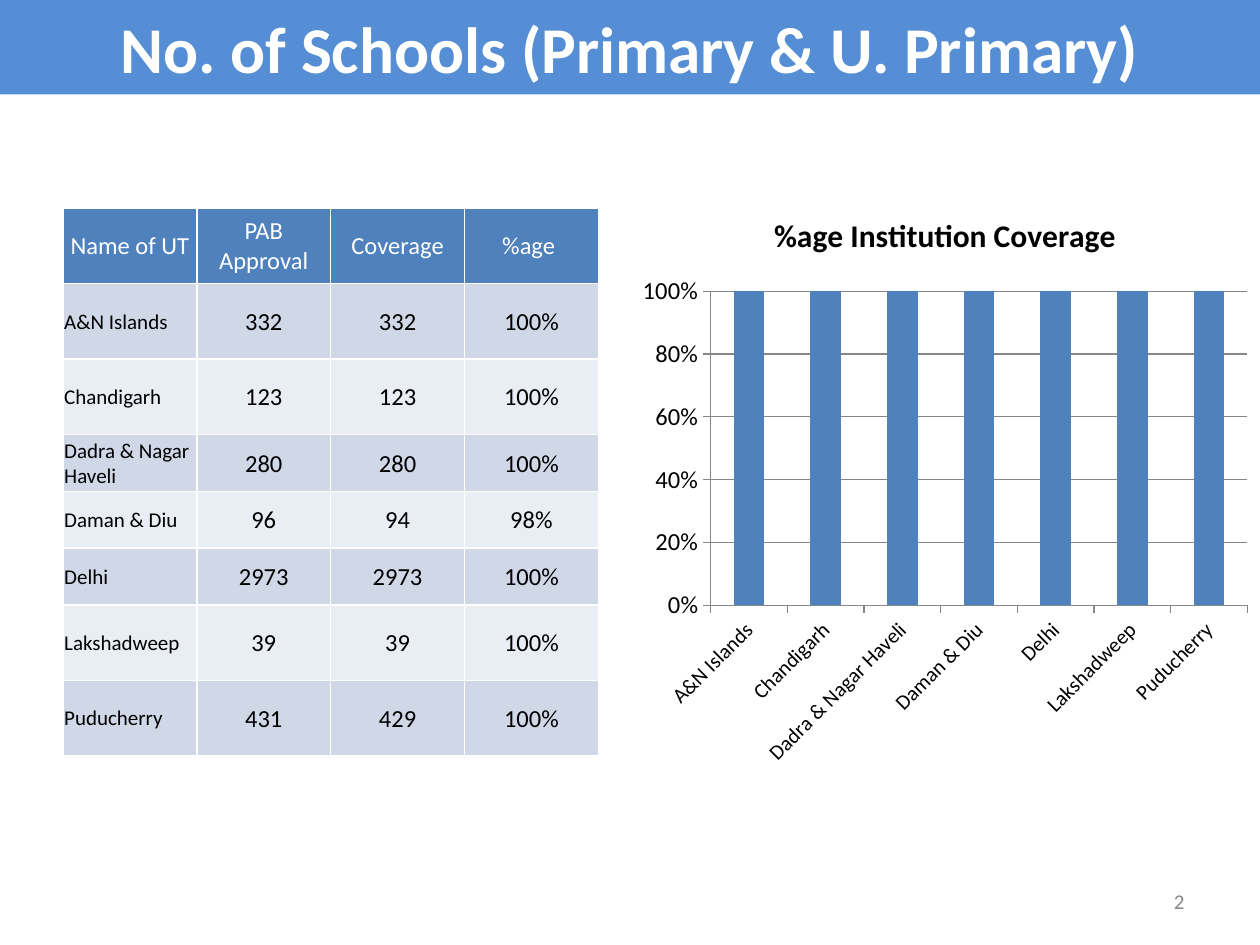
"""Build a slide on school coverage with a table and a column chart."""
import pptx
import pptx.chart.data
import pptx.dml.color
import pptx.enum.chart
import pptx.enum.shapes
import pptx.enum.text
import pptx.util

TITLE = "No. of Schools (Primary & U. Primary)"
CHART_TITLE = "%age Institution Coverage"
PAGE_NUMBER = "2"
HEADER = ("Name of UT", "PAB Approval", "Coverage", "%age ")
TERRITORIES = [
    ("A&N Islands", "332", "332", "100%"),
    ("Chandigarh", "123", "123", "100%"),
    ("Dadra & Nagar Haveli", "280", "280", "100%"),
    ("Daman & Diu", "96", "94", "98%"),
    ("Delhi", "2973", "2973", "100%"),
    ("Lakshadweep", "39", "39", "100%"),
    ("Puducherry", "431", "429", "100%"),
]
COVERAGE = (10, 10, 10, 9.79, 10, 10, 9.95)
TALL, SHORT = 0.6, 0.45
ROW_HEIGHTS = (TALL, TALL, TALL, SHORT, SHORT, SHORT, TALL, TALL)
COLORS = {
    "banner": "558ED5", "accent": "4F81BD", "odd": "D0D8E8", "even": "E9EDF4",
    "white": "FFFFFF", "black": "000000", "grey": "898989", "line": "868686",
}
FONT = "Calibri"
WIDTH, HEIGHT = 10, 7.5
ALIGN = pptx.enum.text.PP_ALIGN
MIDDLE = pptx.enum.text.MSO_ANCHOR.MIDDLE


def color(name):
    return pptx.dml.color.RGBColor.from_string(COLORS[name])


def area(left, top, width, height):
    """Convert shares of the slide's size to lengths."""
    return [pptx.util.Inches(share * size) for share, size in
            zip((left, top, width, height), (WIDTH, HEIGHT) * 2)]


def apply(target, values):
    for name, value in values.items():
        setattr(target, name, value)


def style_font(font, size, color_name, bold=False):
    apply(font, {"name": FONT, "size": pptx.util.Pt(size), "bold": bold})
    font.color.rgb = color(color_name)


def write(frame, text, size, color_name, alignment, bold=False):
    paragraph = frame.paragraphs[0]
    paragraph.alignment = alignment
    run = paragraph.add_run()
    run.text = text
    style_font(run.font, size, color_name, bold)


def add_title(slide):
    banner = slide.shapes.add_shape(
        pptx.enum.shapes.MSO_SHAPE.RECTANGLE, *area(0, 0, 1, 0.1))
    banner.shadow.inherit = False
    banner.fill.solid()
    banner.fill.fore_color.rgb = color("banner")
    banner.line.fill.background()
    apply(banner.text_frame, {"word_wrap": True, "vertical_anchor": MIDDLE})
    write(banner.text_frame, TITLE, 37.3, "white", ALIGN.CENTER, True)


def add_territory_table(slide):
    rows = [HEADER, *TERRITORIES]
    table = slide.shapes.add_table(
        len(rows), len(HEADER), *area(0.05, 0.22, 0.425, 0.58)).table
    margin = pptx.util.Inches(0.01)
    cell_format = {"vertical_anchor": MIDDLE, "margin_left": margin,
                   "margin_top": margin, "margin_right": margin, "margin_bottom": 0}
    for row_index, (texts, height) in enumerate(zip(rows, ROW_HEIGHTS)):
        table.rows[row_index].height = pptx.util.Inches(height)
        is_header = row_index == 0
        fill = "accent" if is_header else ("even", "odd")[row_index % 2]
        for column_index, text in enumerate(texts):
            cell = table.cell(row_index, column_index)
            apply(cell, cell_format)
            cell.fill.solid()
            cell.fill.fore_color.rgb = color(fill)
            is_name = column_index == 0 and not is_header
            write(cell.text_frame, text, 12 if is_name else 14,
                  "white" if is_header else "black",
                  ALIGN.LEFT if is_name else ALIGN.CENTER)


def add_coverage_chart(slide):
    data = pptx.chart.data.CategoryChartData()
    data.categories = [territory[0] for territory in TERRITORIES]
    data.add_series(CHART_TITLE, COVERAGE)
    chart = slide.shapes.add_chart(
        pptx.enum.chart.XL_CHART_TYPE.COLUMN_CLUSTERED,
        *area(0.5, 0.2, 0.5, 0.622), data).chart
    style_font(chart.font, 18, "black")
    apply(chart, {"has_legend": False, "has_title": True})
    write(chart.chart_title.text_frame, CHART_TITLE, 18, "black", ALIGN.CENTER, True)

    plot = chart.plots[0]
    apply(plot, {"gap_width": 150, "vary_by_categories": False})
    bar_fill = plot.series[0].format.fill
    bar_fill.solid()
    bar_fill.fore_color.rgb = color("accent")

    value_axis, category_axis = chart.value_axis, chart.category_axis
    apply(value_axis, {"minimum_scale": 0, "maximum_scale": 1, "major_unit": 0.2,
                       "has_major_gridlines": True})
    apply(value_axis.tick_labels, {"number_format": "0%",
                                   "number_format_is_linked": False})
    for axis, size in ((value_axis, 14), (category_axis, 12)):
        axis.major_tick_mark = pptx.enum.chart.XL_TICK_MARK.OUTSIDE
        style_font(axis.tick_labels.font, size, "black")
        axis.format.line.color.rgb = color("line")
    value_axis.major_gridlines.format.line.color.rgb = color("line")
    category_axis._element.txPr.bodyPr.set("rot", "-2700000")


def add_page_number(slide):
    box = slide.shapes.add_textbox(*area(0.717, 0.927, 0.233, 0.053))
    apply(box.text_frame, {"word_wrap": True, "vertical_anchor": MIDDLE})
    write(box.text_frame, PAGE_NUMBER, 12, "grey", ALIGN.RIGHT)


def main():
    presentation = pptx.Presentation()
    apply(presentation, {"slide_width": pptx.util.Inches(WIDTH),
                         "slide_height": pptx.util.Inches(HEIGHT)})
    slide = presentation.slides.add_slide(presentation.slide_layouts[6])
    for add_part in (add_title, add_territory_table, add_page_number, add_coverage_chart):
        add_part(slide)
    presentation.save("out.pptx")


if __name__ == "__main__":
    main()
